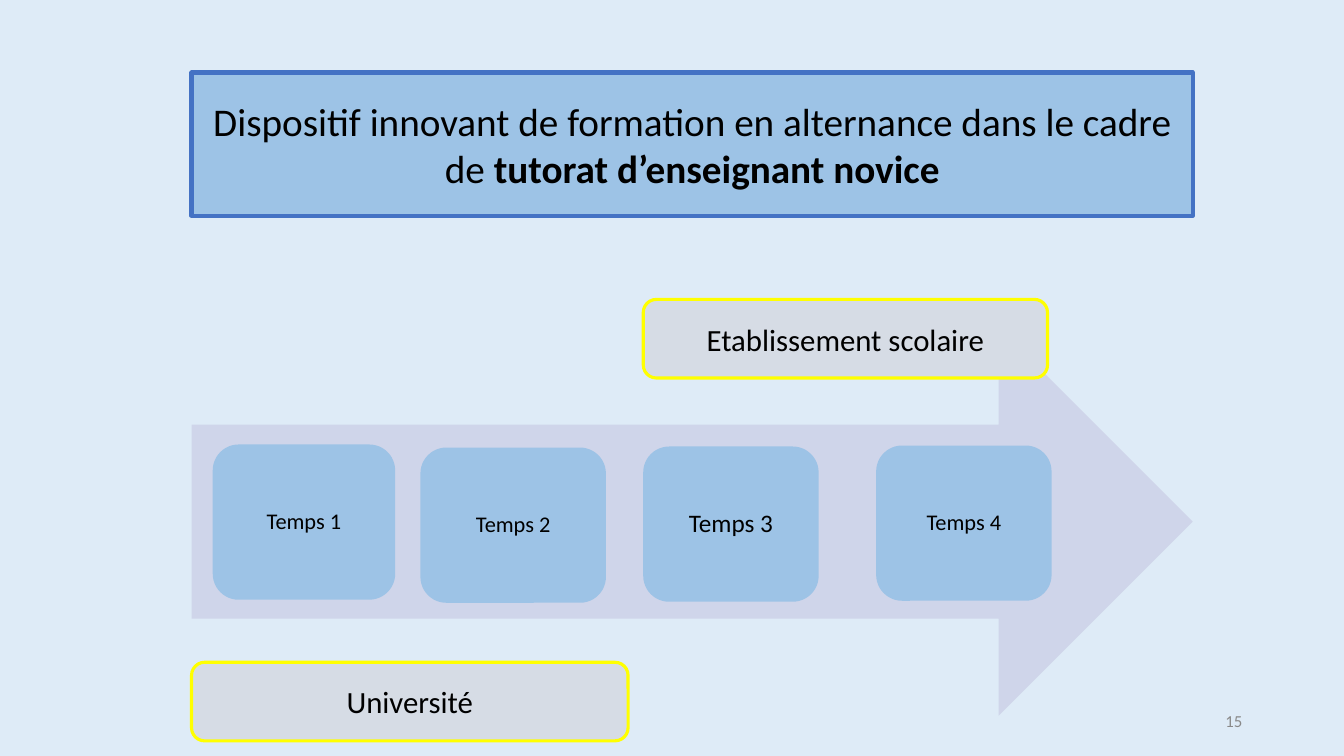
from dataclasses import dataclass

from lxml.etree import SubElement
from pptx import Presentation
from pptx.dml.color import RGBColor
from pptx.enum.shapes import MSO_SHAPE as Shape
from pptx.enum.text import MSO_ANCHOR as Anchor, PP_ALIGN as Align
from pptx.oxml.ns import qn
from pptx.util import Pt

PX = 9144  # EMU per px, 100 px to the inch


@dataclass(frozen=True)
class Theme:
    font: str = "Calibri"
    background: str = "DEEBF7"
    arrow: str = "CFD5EA"
    step: str = "9DC3E6"
    title_line: str = "4472C4"
    place: str = "D6DCE5"
    place_line: str = "FFFF00"
    text: str = "000000"
    page_number: str = "898989"
    title_size: int = 28
    place_size: int = 22
    number_size: int = 12


theme = Theme()


def paint(box, fill, line=None, width=0):
    box.fill.solid()
    box.fill.fore_color.rgb = RGBColor.from_string(fill)
    if line:
        box.line.color.rgb = RGBColor.from_string(line)
        box.line.width = Pt(width)
    else:
        box.line.fill.background()


def style_text(box, size, color=theme.text, align=Align.CENTER):
    frame = box.text_frame
    frame.word_wrap = True
    frame.vertical_anchor = Anchor.MIDDLE
    for para in frame.paragraphs:
        para.alignment = align
        for span in para.runs:
            span.font.name = theme.font
            span.font.size = Pt(size)
            span.font.color.rgb = RGBColor.from_string(color)


# Slide and background
deck = Presentation()
deck.slide_width, deck.slide_height = 1333 * PX, 750 * PX
page = deck.slides.add_slide(deck.slide_layouts[5])
page.background.fill.solid()
page.background.fill.fore_color.rgb = RGBColor.from_string(theme.background)

# Title in a rounded frame
title = page.shapes.title
title.left, title.top, title.width, title.height = (
    length * PX for length in (190, 72, 993, 142))
outline = SubElement(title.element.spPr, qn("a:prstGeom"), prst="roundRect")
SubElement(outline, qn("a:avLst"))
paint(title, theme.step, theme.title_line, 3)
title_para = title.text_frame.paragraphs[0]
title_para.text = "Dispositif innovant de formation en alternance dans le cadre de "
topic = title_para.add_run()
topic.text = "tutorat d’enseignant novice"
topic.font.bold = True
style_text(title, theme.title_size)

# Time arrow
arrow = page.shapes.add_shape(
    Shape.RIGHT_ARROW, 190 * PX, 325 * PX, 993 * PX, 385 * PX)
arrow.shadow.inherit = False
paint(arrow, theme.arrow)

# Steps along the arrow: left, top, width, text size
steps = [(211, 441, 181, 16), (417, 444, 184, 16),
         (638, 443, 174, 18), (869, 442, 174, 16)]
for number, (left, top, width, size) in enumerate(steps, start=1):
    step = page.shapes.add_shape(
        Shape.ROUNDED_RECTANGLE, left * PX, top * PX, width * PX, 154 * PX)
    step.shadow.inherit = False
    paint(step, theme.step)
    frame = step.text_frame
    frame.text = f"Temps {number}"
    frame.margin_left = frame.margin_right = 7 * PX
    frame.margin_top = frame.margin_bottom = 7 * PX
    frame.paragraphs[0].line_spacing = 0.9
    style_text(step, size)

# Places of training: name, left, top, width
places = [("Université", 190, 657, 433),
          ("Etablissement scolaire", 638, 297, 401)]
for name, left, top, width in places:
    place = page.shapes.add_shape(
        Shape.ROUNDED_RECTANGLE, left * PX, top * PX, width * PX, 78 * PX)
    place.shadow.inherit = False
    paint(place, theme.place, theme.place_line, 2.25)
    place.text_frame.text = name
    style_text(place, theme.place_size)

# Page number
page_number = page.shapes.add_textbox(942 * PX, 695 * PX, 300 * PX, 40 * PX)
page_number.text_frame.text = "15"
style_text(page_number, theme.number_size, theme.page_number, Align.RIGHT)

deck.save("out.pptx")
